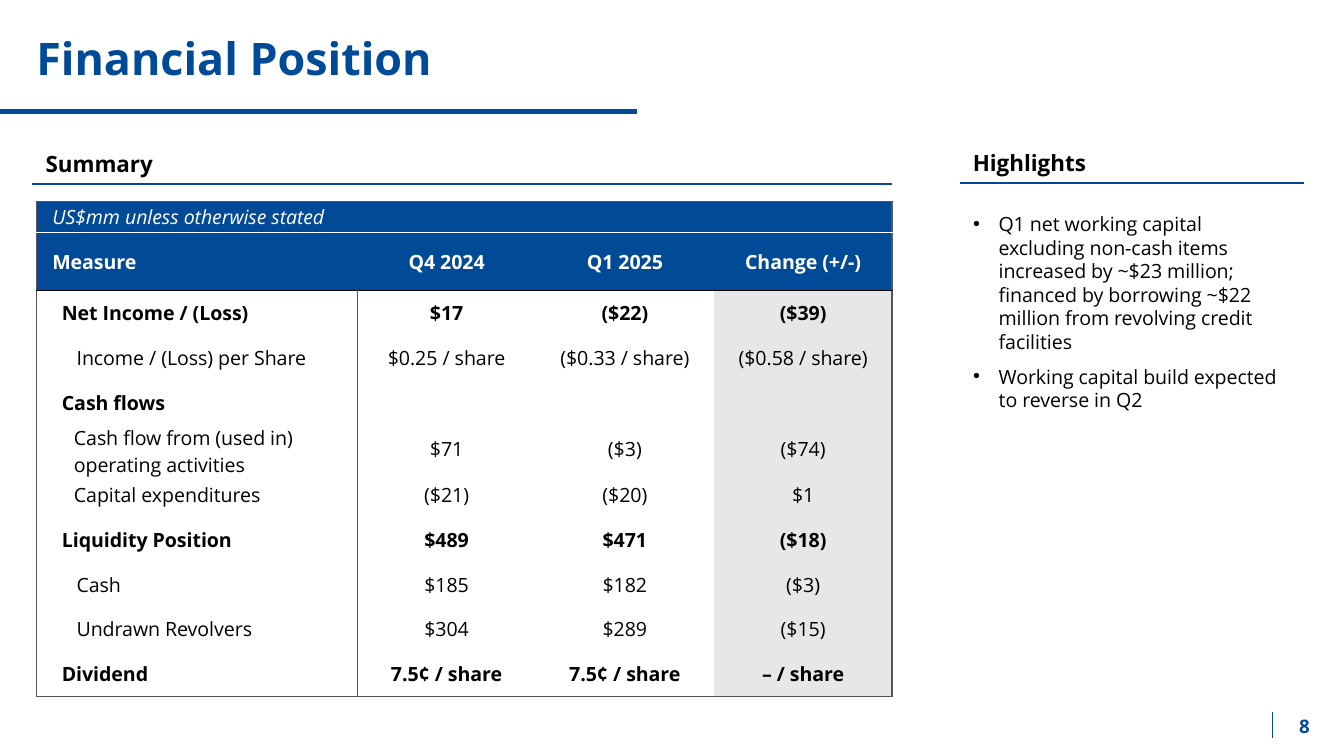
from lxml import etree
from pptx import Presentation
from pptx.dml.color import RGBColor
from pptx.enum.shapes import MSO_CONNECTOR
from pptx.enum.text import MSO_ANCHOR, MSO_AUTO_SIZE, PP_ALIGN
from pptx.oxml.ns import qn
from pptx.util import Inches, Pt

STRAIGHT = MSO_CONNECTOR.STRAIGHT
MIDDLE, TOP = MSO_ANCHOR.MIDDLE, MSO_ANCHOR.TOP
LEFT, CENTER = PP_ALIGN.LEFT, PP_ALIGN.CENTER
NO_FIT = MSO_AUTO_SIZE.NONE

FONT = "Open Sans"
BLUE, RULE_BLUE, GREY = "004A97", "004894", "555759"
BLACK, WHITE, SHADE = "000000", "FFFFFF", "E6E7E8"
NO_STYLE = "{2D5ABB26-0587-4C30-8999-92F81FD0307C}"

UNITS = "US$mm unless otherwise stated"
HEADINGS = ("Measure", "Q4 2024", "Q1 2025", "Change (+/-)")
COLUMN_FILLS = (None, None, WHITE, SHADE)
MEASURES = (
    (0.19, True, "Net Income / (Loss)", "$17", "($22)", "($39)"),
    (0.3, False, "Income / (Loss) per Share", "$0.25 / share", "($0.33 / share)", "($0.58 / share)"),
    (0.19, True, "Cash flows", "", "", ""),
    (0.28, False, "Cash flow from (used in) operating activities", "$71", "($3)", "($74)"),
    (0.28, False, "Capital expenditures", "($21)", "($20)", "$1"),
    (0.19, True, "Liquidity Position", "$489", "$471", "($18)"),
    (0.3, False, "Cash", "$185", "$182", "($3)"),
    (0.3, False, "Undrawn Revolvers", "$304", "$289", "($15)"),
    (0.19, True, "Dividend", "7.5¢ / share", "7.5¢ / share", "– / share"),
)
HIGHLIGHTS = (
    "Q1 net working capital excluding non-cash items increased by ~$23 million; "
    "financed by borrowing ~$22 million from revolving credit facilities",
    "Working capital build expected to reverse in Q2",
)


def rgb(value):
    """Turn a hex string into a colour."""
    return RGBColor.from_string(value)


def apply(target, values):
    """Set every attribute named in a dict of format values."""
    for name, value in values.items():
        setattr(target, name, value)


def style_font(font, size, color, **values):
    """Give a font its family, size, colour and further values."""
    apply(font, {"name": FONT, "size": Pt(size), **values})
    font.color.rgb = rgb(color)


def place(shape, left, top, width, height):
    """Move and size a shape, in inches."""
    apply(shape, {"left": Inches(left), "top": Inches(top),
                  "width": Inches(width), "height": Inches(height)})


def add_rule(slide, start, end, color, weight):
    """Draw a straight rule without a shadow."""
    rule = slide.shapes.add_connector(STRAIGHT, *map(Inches, (*start, *end)))
    rule.line.color.rgb = rgb(color)
    rule.line.width = Pt(weight)
    etree.SubElement(rule._element.spPr, qn("a:effectLst"))


def add_label(slide, box, text, size, color, align=LEFT):
    """Add a bold one-line text box."""
    frame = slide.shapes.add_textbox(*map(Inches, box)).text_frame
    apply(frame, {"word_wrap": True, "vertical_anchor": MIDDLE})
    label = frame.paragraphs[0]
    apply(label, {"text": text, "alignment": align})
    style_font(label.runs[0].font, size, color, bold=True)


def add_section(slide, left, right, rule_y, label_width, text):
    """Add a section heading that sits on its rule."""
    add_rule(slide, (left, rule_y), (right, rule_y), RULE_BLUE, 1)
    add_label(slide, (left, rule_y - 0.3, label_width, 0.3), text, 12, BLACK)


def fill_title(title, text):
    """Place and format the title."""
    place(title, 0.17, 0.14, 9.15, 0.63)
    inset = Inches(0.1)
    apply(title.text_frame, {"margin_left": inset, "margin_right": inset, "margin_top": inset,
                             "margin_bottom": inset, "vertical_anchor": MIDDLE,
                             "auto_size": NO_FIT})
    heading = title.text_frame.paragraphs[0]
    apply(heading, {"text": text, "alignment": LEFT, "line_spacing": 0.9})
    style_font(heading.runs[0].font, 24, BLUE, bold=True)


def fill_highlights(body, items):
    """Place the body and fill it with bullets."""
    place(body, 7.14, 1.53, 2.56, 1.6)
    frame = body.text_frame
    apply(frame, {"vertical_anchor": TOP, "auto_size": NO_FIT, "word_wrap": True})
    for index, text in enumerate(items):
        item = frame.add_paragraph() if index else frame.paragraphs[0]
        apply(item, {"text": text, "alignment": LEFT, "line_spacing": 1.0,
                     "space_before": Pt(0), "space_after": Pt(6)})
        props = item._p.get_or_add_pPr()
        props.set("marL", str(Inches(0.19)))
        props.set("indent", str(-Inches(0.19)))
        bullet_color = etree.SubElement(props, qn("a:buClr"))
        etree.SubElement(bullet_color, qn("a:srgbClr"), val=BLACK)
        etree.SubElement(props, qn("a:buFont"), typeface="Arial")
        etree.SubElement(props, qn("a:buChar"), char="•")
        style_font(item.runs[0].font, 10.5, BLACK)


def cell_borders(row, col):
    """Work out the edges of a summary cell."""
    across = {0: (GREY, 1), 1: (WHITE, 1), 2: (BLACK, 0.5), len(MEASURES) + 2: (GREY, 1)}
    down = {0: (GREY, 1), len(HEADINGS): (GREY, 1)}
    if row > 1:
        down[1] = (GREY, 1)
    return {"a:lnL": down.get(col), "a:lnR": down.get(col + 1),
            "a:lnT": across.get(row), "a:lnB": across.get(row + 1)}


def format_cell(cell, borders, fill):
    """Set the edges, fill and margins of a cell."""
    props = cell._tc.get_or_add_tcPr()
    for tag, edge in borders.items():
        line = etree.SubElement(props, qn(tag))
        if edge:
            color, weight = edge
            line.set("w", str(Pt(weight)))
            solid = etree.SubElement(line, qn("a:solidFill"))
            etree.SubElement(solid, qn("a:srgbClr"), val=color)
        else:
            etree.SubElement(line, qn("a:noFill"))
    if fill:
        cell.fill.solid()
        cell.fill.fore_color.rgb = rgb(fill)
    else:
        cell.fill.background()
    apply(cell, {"margin_left": 0, "margin_right": 0, "margin_top": 0,
                 "margin_bottom": 0, "vertical_anchor": MIDDLE})


def write_cell(cell, text, color, align, indent=0, **values):
    """Write one cell of the summary."""
    entry = cell.text_frame.paragraphs[0]
    apply(entry, {"text": text, "alignment": align})
    if indent:
        entry._p.get_or_add_pPr().set("marL", str(Inches(indent)))
    style_font(entry.font, 10.5, color, **values)
    for run in entry.runs:
        style_font(run.font, 10.5, color, **values)


def add_summary(slide):
    """Build the table of financial measures."""
    width, height, first_col = 6.37, 3.67, 2.39
    head_heights = [0.23, 0.43]
    row_count, col_count = len(MEASURES) + 2, len(HEADINGS)
    frame = slide.shapes.add_table(row_count, col_count,
                                   *map(Inches, (0.27, 1.5, width, height)))
    table = frame.table
    apply(table, {"first_row": False, "horz_banding": False})
    table._tbl.tblPr.find(qn("a:tableStyleId")).text = NO_STYLE
    row_height = (height - sum(head_heights)) / len(MEASURES)
    for row, size in zip(table.rows, head_heights + [row_height] * len(MEASURES)):
        row.height = Inches(size)
    value_width = (width - first_col) / (col_count - 1)
    for column, size in zip(table.columns, [first_col] + [value_width] * (col_count - 1)):
        column.width = Inches(size)

    lines = [(0, False, UNITS, "", "", ""), (0, True, *HEADINGS), *MEASURES]
    for row, (indent, bold, *texts) in enumerate(lines):
        header = row < len(head_heights)
        for col, text in enumerate(texts):
            cell = table.cell(row, col)
            format_cell(cell, cell_borders(row, col), BLUE if header else COLUMN_FILLS[col])
            if header and col == 0:
                cell.margin_left = Inches(0.12)
            write_cell(cell, text, WHITE if header else BLACK, CENTER if col else LEFT,
                       0 if col else indent, bold=bold, italic=row == 0)
    table.cell(0, 0).merge(table.cell(0, 2))


def main():
    """Build the financial position slide."""
    deck = Presentation()
    apply(deck, {"slide_width": Inches(10), "slide_height": Inches(10 * 9 / 16)})
    slide = deck.slides.add_slide(deck.slide_layouts[1])
    fill_title(slide.shapes.title, "Financial Position")
    fill_highlights(slide.placeholders[1], HIGHLIGHTS)
    add_rule(slide, (0, 0.83), (4.74, 0.83), BLUE, 3)
    add_section(slide, 0.24, 6.64, 1.37, 5.09, "Summary")
    add_section(slide, 7.14, 9.7, 1.36, 2.03, "Highlights")
    add_summary(slide)
    add_rule(slide, (9.47, 5.3), (9.47, 5.49), BLUE, 0.75)
    add_label(slide, (9.47, 5.26, 0.47, 0.28), "8", 10, BLUE, CENTER)
    deck.save("out.pptx")


if __name__ == "__main__":
    main()
